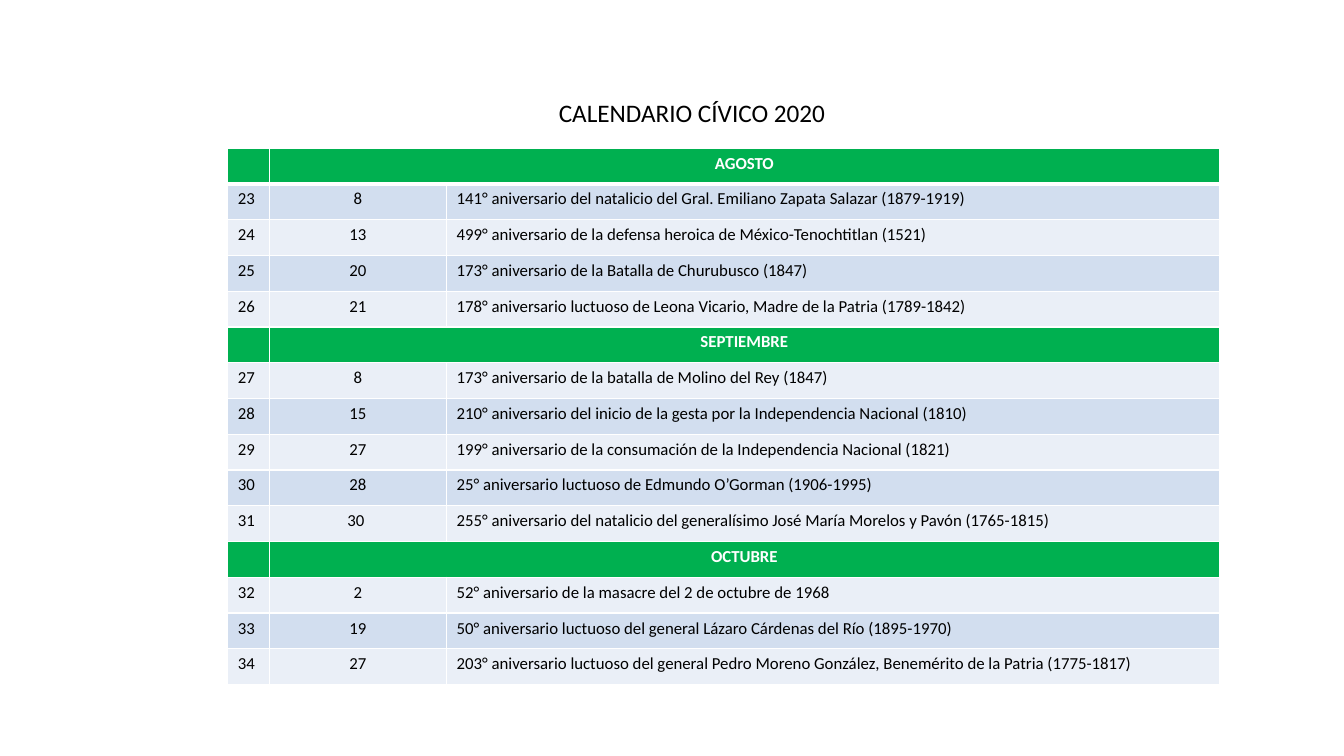
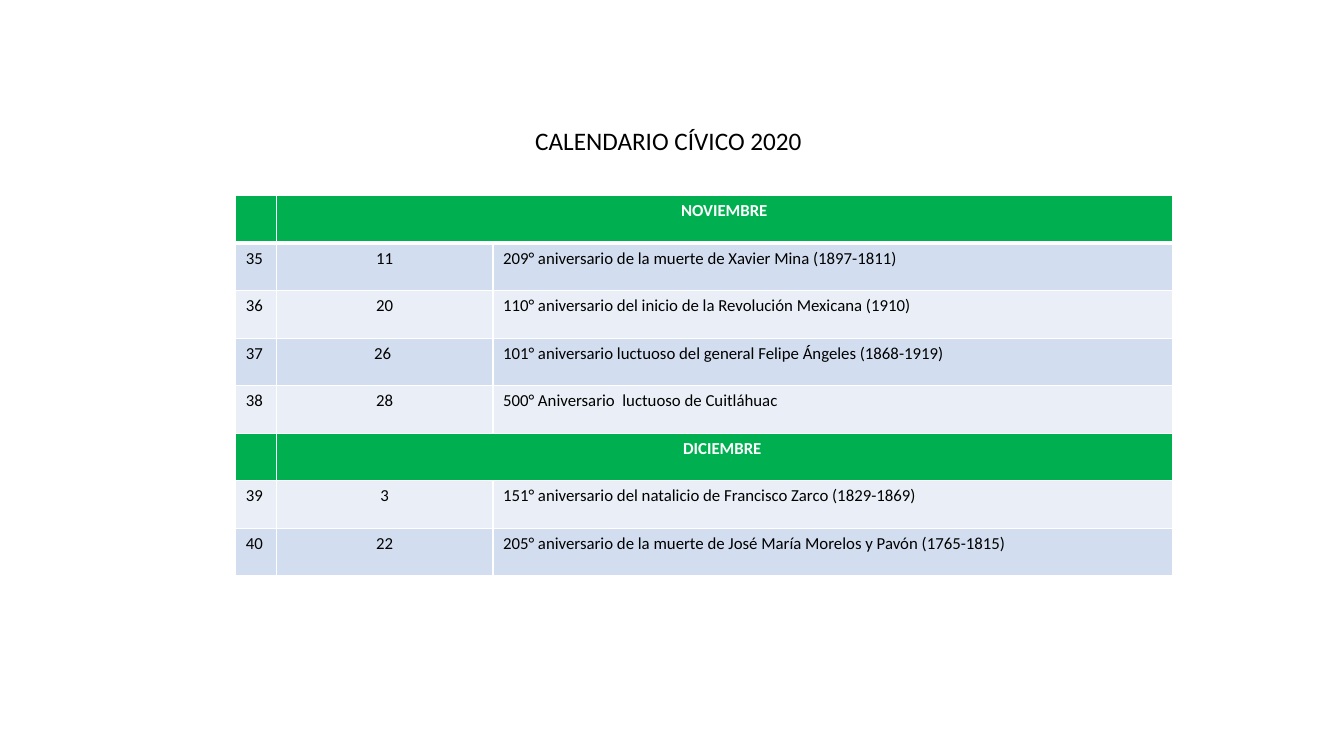
"""Build the two slides of the 2020 civic calendar."""
from dataclasses import dataclass
from itertools import count
from typing import Iterator

from lxml.etree import SubElement
from pptx import Presentation
from pptx.dml.color import RGBColor
from pptx.enum.text import MSO_ANCHOR, MSO_AUTO_SIZE, PP_ALIGN
from pptx.oxml.ns import qn
from pptx.util import Inches, Length, Pt

GRID_COLUMNS, GRID_ROWS = 133.33, 75
FONT = "Calibri"
GREEN, WHITE, BLACK = "00B050", "FFFFFF", "000000"
BANDS = ("EAEFF7", "D2DEEF")
HEADING = "CALENDARIO CÍVICO 2020"


@dataclass(frozen=True)
class Month:
    name: str
    events: tuple[tuple[str, str], ...]


@dataclass(frozen=True)
class CalendarPage:
    heading_box: tuple[float, float, float, float]
    heading_align: PP_ALIGN
    table_corner: tuple[float, float]
    column_widths: tuple[float, float, float]
    row_height: float
    first_number: int
    months: tuple[Month, ...]


PAGES = (
    CalendarPage(
        (54.3, 9.2, 28.7, 4), PP_ALIGN.CENTER, (22.6, 14.7), (4.1, 17.6, 76.7), 3.55, 23,
        (
            Month("AGOSTO", (
                ("8", "141° aniversario del natalicio del Gral. Emiliano Zapata Salazar (1879-1919)"),
                ("13", "499° aniversario de la defensa heroica de México-Tenochtitlan (1521)"),
                ("20", "173° aniversario de la Batalla de Churubusco (1847)"),
                ("21", "178° aniversario luctuoso de Leona Vicario, Madre de la Patria (1789-1842)"),
            )),
            Month("SEPTIEMBRE", (
                ("8", "173° aniversario de la batalla de Molino del Rey (1847)"),
                ("15", "210° aniversario del inicio de la gesta por la Independencia Nacional (1810)"),
                ("27", "199° aniversario de la consumación de la Independencia Nacional (1821)"),
                ("28", "25° aniversario luctuoso de Edmundo O’Gorman (1906-1995)"),
                ("30 ", "255° aniversario del natalicio del generalísimo José María Morelos y Pavón (1765-1815)"),
            )),
            Month("OCTUBRE", (
                ("2", "52° aniversario de la masacre del 2 de octubre de 1968"),
                ("19", "50° aniversario luctuoso del general Lázaro Cárdenas del Río (1895-1970)"),
                ("27", "203° aniversario luctuoso del general Pedro Moreno González, "
                       "Benemérito de la Patria (1775-1817)"),
            )),
        ),
    ),
    CalendarPage(
        (52.1, 11.9, 34.1, 3.9), PP_ALIGN.LEFT, (23.4, 19.4), (4, 21.5, 67.4), 4.72, 35,
        (
            Month("NOVIEMBRE", (
                ("11", "209° aniversario de la muerte de Xavier Mina (1897-1811)"),
                ("20", "110° aniversario del inicio de la Revolución Mexicana (1910)"),
                ("26 ", "101° aniversario luctuoso del general Felipe Ángeles (1868-1919)"),
                ("28", "500° Aniversario  luctuoso de Cuitláhuac"),
            )),
            Month("DICIEMBRE ", (
                ("3", "151° aniversario del natalicio de Francisco Zarco (1829-1869)"),
                ("22", "205° aniversario de la muerte de José María Morelos y Pavón (1765-1815)"),
            )),
        ),
    ),
)


def grid(units: float) -> Length:
    return Inches(units / 10)


def color(value: str) -> RGBColor:
    return RGBColor.from_string(value)


def write(frame, text: str, *, size: float = 12, ink: str = BLACK,
          bold: bool = False, align: PP_ALIGN = PP_ALIGN.LEFT) -> None:
    paragraph = frame.paragraphs[0]
    paragraph.alignment = align
    if not text:
        SubElement(paragraph._p, qn("a:endParaRPr"), sz=str(int(size * 100)))
        return
    run = paragraph.add_run()
    run.text = text
    run.font.name, run.font.size, run.font.bold = FONT, Pt(size), bold
    run.font.color.rgb = color(ink)


def style_cell(cell, fill: str, row: int) -> None:
    properties = cell._tc.get_or_add_tcPr()
    thick_edge = {0: "lnB", 1: "lnT"}.get(row)
    for edge in ("lnL", "lnR", "lnT", "lnB"):
        width = Pt(3 if edge == thick_edge else 1)
        line = SubElement(properties, qn(f"a:{edge}"), w=str(width))
        SubElement(SubElement(line, qn("a:solidFill")), qn("a:srgbClr"), val=WHITE)
    cell.fill.solid()
    cell.fill.fore_color.rgb = color(fill)


def add_heading(slide, page: CalendarPage) -> None:
    heading = slide.shapes.title
    heading.left, heading.top, heading.width, heading.height = map(grid, page.heading_box)
    frame = heading.text_frame
    frame.word_wrap = False
    frame.auto_size = MSO_AUTO_SIZE.NONE
    frame.vertical_anchor = MSO_ANCHOR.TOP
    write(frame, HEADING, size=18, align=page.heading_align)


def calendar_rows(page: CalendarPage) -> Iterator[tuple[bool, tuple[str, str, str]]]:
    numbers = count(page.first_number)
    for month in page.months:
        yield True, ("", month.name, "")
        for day, event in month.events:
            yield False, (str(next(numbers)), day, event)


def add_calendar(slide, page: CalendarPage) -> None:
    rows = list(calendar_rows(page))
    widths = page.column_widths
    calendar = slide.shapes.add_table(
        len(rows), len(widths), *map(grid, page.table_corner),
        grid(sum(widths)), grid(page.row_height * len(rows))).table
    for column, width in zip(calendar.columns, widths):
        column.width = grid(width)
    for row, (is_month, texts) in enumerate(rows):
        calendar.rows[row].height = grid(page.row_height)
        for column, text in enumerate(texts):
            cell = calendar.cell(row, column)
            style_cell(cell, GREEN if is_month else BANDS[row % 2], row)
            write(cell.text_frame, text, ink=WHITE if is_month else BLACK, bold=is_month,
                  align=PP_ALIGN.CENTER if column == 1 else PP_ALIGN.LEFT)
        if is_month:
            calendar.cell(row, 1).merge(calendar.cell(row, 2))


def main() -> None:
    deck = Presentation()
    deck.slide_width, deck.slide_height = grid(GRID_COLUMNS), grid(GRID_ROWS)
    for page in PAGES:
        slide = deck.slides.add_slide(deck.slide_layouts.get_by_name("Title Only"))
        add_heading(slide, page)
        add_calendar(slide, page)
    deck.save("out.pptx")


if __name__ == "__main__":
    main()
